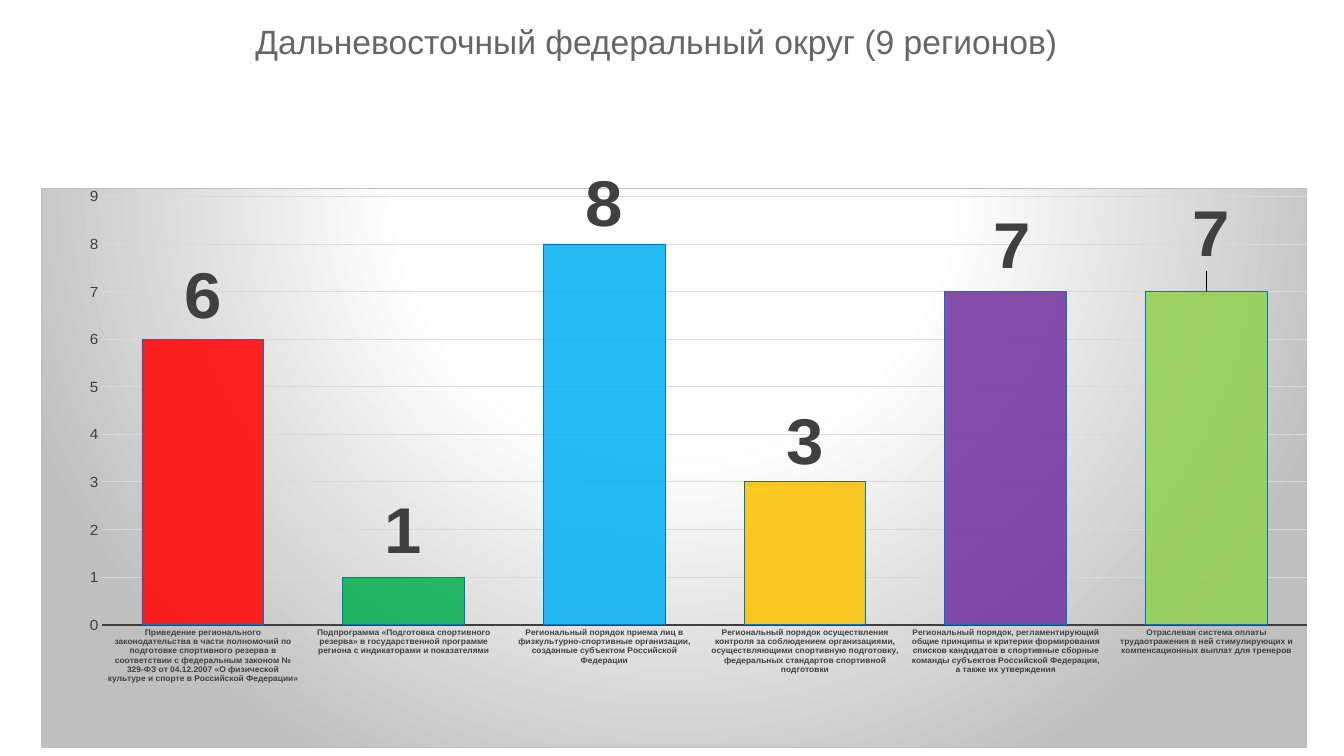
from dataclasses import dataclass

from lxml import etree
from pptx import Presentation
from pptx.chart.data import CategoryChartData
from pptx.dml.color import RGBColor
from pptx.enum.chart import XL_CHART_TYPE, XL_LABEL_POSITION, XL_TICK_MARK
from pptx.enum.text import MSO_ANCHOR, PP_ALIGN
from pptx.oxml import parse_xml
from pptx.oxml.ns import nsdecls, qn
from pptx.util import Inches, Pt

COLUMN = XL_CHART_TYPE.COLUMN_CLUSTERED
OUTSIDE = XL_LABEL_POSITION.OUTSIDE_END
NO_TICK = XL_TICK_MARK.NONE
MIDDLE = MSO_ANCHOR.MIDDLE
CENTER = PP_ALIGN.CENTER


@dataclass(frozen=True)
class Theme:
    face: str = "Arial"
    title: str = "666666"
    ink: str = "404040"
    grid: str = "D9D9D9"
    edge: str = "0073BF"
    light: str = "FFFFFF"
    shade: str = "BFBFBF"
    head: float = 24
    value: float = 48
    scale: float = 10.9
    label: float = 6
    thin: float = 0.69
    thick: float = 1.37


THEME = Theme()

BARS = [
    ("Приведение регионального законодательства в части полномочий по "
     "подготовке спортивного резерва в соответствии с федеральным законом № "
     "329-ФЗ от 04.12.2007 «О физической культуре и спорте в Российской Федерации»",
     6, "FF0000", (0, -0.005)),
    ("Подпрограмма «Подготовка спортивного резерва» в государственной программе "
     "региона с индикаторами и показателями",
     1, "00B050", (0, -0.01)),
    ("Региональный порядок приема лиц в физкультурно-спортивные организации, "
     "созданные субъектом Российской Федерации",
     8, "00B0F0", (0, 0)),
    ("Региональный порядок осуществления контроля за соблюдением организациями, "
     "осуществляющими спортивную подготовку, федеральных стандартов спортивной "
     "подготовки",
     3, "FFC000", (0, 0)),
    ("Региональный порядок, регламентирующий общие принципы и критерии "
     "формирования списков кандидатов в спортивные сборные команды субъектов "
     "Российской Федерации, а также их утверждения",
     7, "7030A0", (0.005, -0.01)),
    ("Отраслевая система оплаты трудаотражения в ней стимулирующих и "
     "компенсационных выплат для тренеров",
     7, "92D050", (0.004, -0.03)),
]


def style(font, size, color=THEME.ink, bold=False):
    font.name = THEME.face
    font.size = Pt(size)
    font.bold = bold
    font.color.rgb = RGBColor.from_string(color)


def write(frame, text, align=CENTER, space=0.9, **fmt):
    para = frame.paragraphs[0]
    para.alignment = align
    para.line_spacing = space
    run = para.add_run()
    run.text = text
    style(run.font, **fmt)


def stroke(line, color, width):
    line.color.rgb = RGBColor.from_string(color)
    line.width = Pt(width)


def layout(**parts):
    tags = "".join(f'<c:{key} val="{val}"/>' for key, val in parts.items())
    return parse_xml(
        f'<c:layout {nsdecls("c")}><c:manualLayout>{tags}</c:manualLayout></c:layout>')


def heading(slide, box):
    title = slide.shapes.title
    title.left, title.top, title.width, title.height = map(Inches, box)
    title.text_frame.vertical_anchor = MIDDLE
    title.text_frame.word_wrap = True
    write(title.text_frame, "Дальневосточный федеральный округ (9 регионов)",
          size=THEME.head, color=THEME.title)


def backdrop(chart):
    stops = [(0, THEME.light), (39, THEME.light), (100, THEME.shade)]
    marks = "".join(
        f'<a:gs pos="{pos * 1000}"><a:srgbClr val="{color}"/></a:gs>'
        for pos, color in stops)
    chart.element.find(qn("c:chart")).addnext(parse_xml(
        f'<c:spPr {nsdecls("c", "a")}><a:gradFill><a:gsLst>{marks}</a:gsLst>'
        '<a:path path="circle">'
        '<a:fillToRect l="50000" t="-80000" r="50000" b="180000"/></a:path>'
        f'</a:gradFill><a:ln w="{Pt(THEME.thin)}"><a:solidFill>'
        f'<a:srgbClr val="{THEME.shade}"/></a:solidFill></a:ln></c:spPr>'))


def axes(chart):
    cat, val = chart.category_axis, chart.value_axis
    for axis in (cat, val):
        axis.major_tick_mark = axis.minor_tick_mark = NO_TICK
    style(cat.tick_labels.font, THEME.label, bold=True)
    stroke(cat.format.line, THEME.ink, THEME.thick)
    style(val.tick_labels.font, THEME.scale)
    val.format.line.fill.background()
    val.minimum_scale, val.maximum_scale, val.major_unit = 0, 9, 1
    val.has_major_gridlines = True
    stroke(val.major_gridlines.format.line, THEME.grid, THEME.thin)


def columns(chart):
    plot = chart.plots[0]
    plot.gap_width = 65
    plot.vary_by_categories = False
    series = plot.series[0]
    for spot, (_, _, color, _) in enumerate(BARS):
        point = series.points[spot]
        point.format.fill.solid()
        point.format.fill.fore_color.rgb = RGBColor.from_string(color)
        stroke(point.format.line, THEME.edge, THEME.thin)
        style(point.data_label.font, THEME.value, bold=True)
        point.data_label.position = OUTSIDE
    for tint in chart.element.xpath(".//c:dPt/c:spPr/a:solidFill/a:srgbClr"):
        etree.SubElement(tint, qn("a:alpha"), val="85000")
    for label, bar in zip(chart.element.xpath(".//c:dLbl"), BARS):
        dx, dy = bar[3]
        if dx or dy:
            label.find(qn("c:idx")).addnext(layout(x=dx, y=dy))


def graph(slide, box):
    data = CategoryChartData()
    data.categories = [bar[0] for bar in BARS]
    data.add_series("Series 1", [bar[1] for bar in BARS])
    chart = slide.shapes.add_chart(COLUMN, *map(Inches, box), data).chart
    chart.has_title = chart.has_legend = False
    style(chart.font, THEME.scale)
    backdrop(chart)
    axes(chart)
    columns(chart)
    area = chart.element.xpath(".//c:plotArea")[0]
    for old in area.findall(qn("c:layout")):
        area.remove(old)
    area.insert(0, layout(layoutTarget="inner", xMode="edge", yMode="edge",
                          x=0.048, y=0.015, w=0.952, h=0.766))


def main():
    deck = Presentation()
    deck.slide_width, deck.slide_height = Inches(13.33), Inches(7.5)
    slide = deck.slides.add_slide(deck.slide_layouts[5])
    heading(slide, (0.05, 0.13, 12.92, 0.6))
    graph(slide, (0.41, 1.66, 12.56, 5.76))
    deck.save("out.pptx")


if __name__ == "__main__":
    main()
